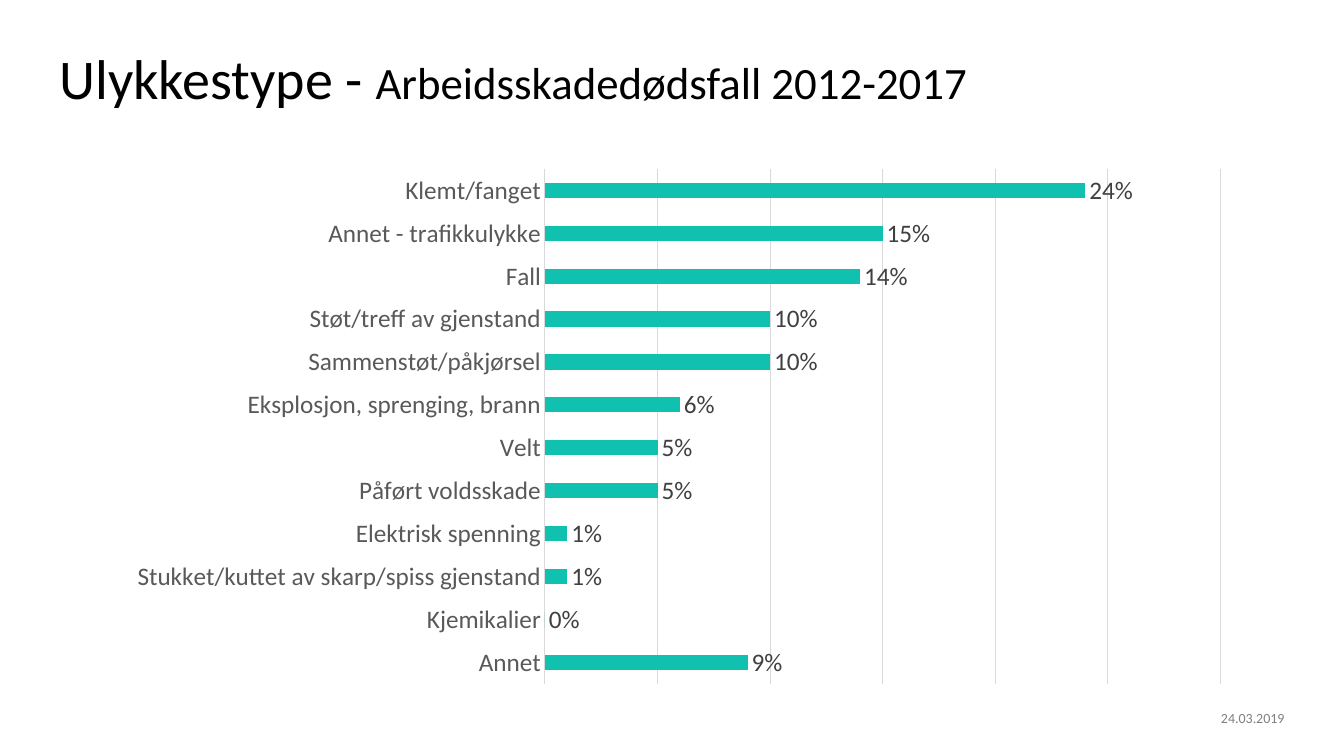
from pptx import Presentation
from pptx.chart.data import CategoryChartData
from pptx.dml.color import RGBColor
from pptx.enum.chart import XL_CHART_TYPE as ChartType
from pptx.enum.chart import XL_LABEL_POSITION as LabelPosition
from pptx.enum.chart import XL_TICK_MARK as TickMark
from pptx.enum.text import MSO_AUTO_SIZE as AutoSize
from pptx.enum.text import PP_ALIGN as Align
from pptx.util import Pt

EMU_PER_PX = 9144  # 100 px to the inch
FONT = "Calibri"
COLORS = {
    "title": "000000",
    "date": "808080",
    "category": "595959",
    "value": "404040",
    "grid": "D9D9D9",
    "bar": "11C1B0",
}
# Share of fatal accidents per type, from the bottom bar up
ACCIDENT_SHARES = {
    "Annet": 0.09,
    "Kjemikalier": 0,
    "Stukket/kuttet av skarp/spiss gjenstand": 0.01,
    "Elektrisk spenning": 0.01,
    "Påført voldsskade": 0.05,
    "Velt": 0.05,
    "Eksplosjon, sprenging, brann": 0.06,
    "Sammenstøt/påkjørsel": 0.1,
    "Støt/treff av gjenstand": 0.1,
    "Fall": 0.14,
    "Annet - trafikkulykke": 0.15,
    "Klemt/fanget": 0.24,
}


def px(*lengths):
    return [length * EMU_PER_PX for length in lengths]


def color(name):
    return RGBColor.from_string(COLORS[name])


def style_font(font, size, color_name):
    font.name = FONT
    font.size = Pt(size)
    font.bold = False
    font.color.rgb = color(color_name)


def style_line(line):
    line.color.rgb = color("grid")
    line.width = Pt(0.75)


def add_text(slide, box, runs, color_name, align=Align.LEFT, line_spacing=1.0):
    """Add one paragraph made of (text, size) runs."""
    frame = slide.shapes.add_textbox(*px(*box)).text_frame
    frame.margin_left = frame.margin_right = 0
    frame.margin_top = frame.margin_bottom = 0
    frame.word_wrap = True
    frame.auto_size = AutoSize.SHAPE_TO_FIT_TEXT
    paragraph = frame.paragraphs[0]
    paragraph.alignment = align
    paragraph.line_spacing = line_spacing
    for text, size in runs:
        run = paragraph.add_run()
        run.text = text
        style_font(run.font, size, color_name)


def add_bar_chart(slide, box, shares):
    data = CategoryChartData(number_format="0%")
    data.categories = list(shares)
    data.add_series("Series 1", list(shares.values()))
    chart = slide.shapes.add_chart(ChartType.BAR_CLUSTERED, *px(*box), data).chart
    chart.has_legend = False
    chart.has_title = False
    style_font(chart.font, 18, "title")

    # Axes
    category_axis = chart.category_axis
    category_axis.major_tick_mark = TickMark.NONE
    category_axis.minor_tick_mark = TickMark.NONE
    style_font(category_axis.tick_labels.font, 18, "category")
    style_line(category_axis.format.line)
    value_axis = chart.value_axis
    value_axis.minimum_scale = 0
    value_axis.maximum_scale = 0.3
    value_axis.major_unit = 0.05
    value_axis.has_major_gridlines = True
    style_line(value_axis.major_gridlines.format.line)
    value_axis.visible = False

    # Bars and their labels
    plot = chart.plots[0]
    plot.gap_width = 182
    plot.vary_by_categories = False
    series = plot.series[0]
    series.format.fill.solid()
    series.format.fill.fore_color.rgb = color("bar")
    labels = series.data_labels
    labels.show_value = True
    labels.position = LabelPosition.OUTSIDE_END
    labels.number_format = "0%"
    labels.number_format_is_linked = False
    style_font(labels.font, 18, "value")


def main():
    presentation = Presentation()
    presentation.slide_width, presentation.slide_height = px(1333, 750)
    slide = presentation.slides.add_slide(presentation.slide_layouts[6])

    # Title
    title_runs = [("Ulykkestype - ", 40), ("Arbeidsskadedødsfall 2012-2017", 32)]
    add_text(slide, (59, 51, 1215, 61), title_runs, "title", line_spacing=0.9)

    # Date
    add_text(slide, (1117, 704, 157, 17), [("24.03.2019", 10)], "date", Align.RIGHT)

    # Accident types
    add_bar_chart(slide, (114, 157, 1119, 532), ACCIDENT_SHARES)

    presentation.save("out.pptx")


if __name__ == "__main__":
    main()
